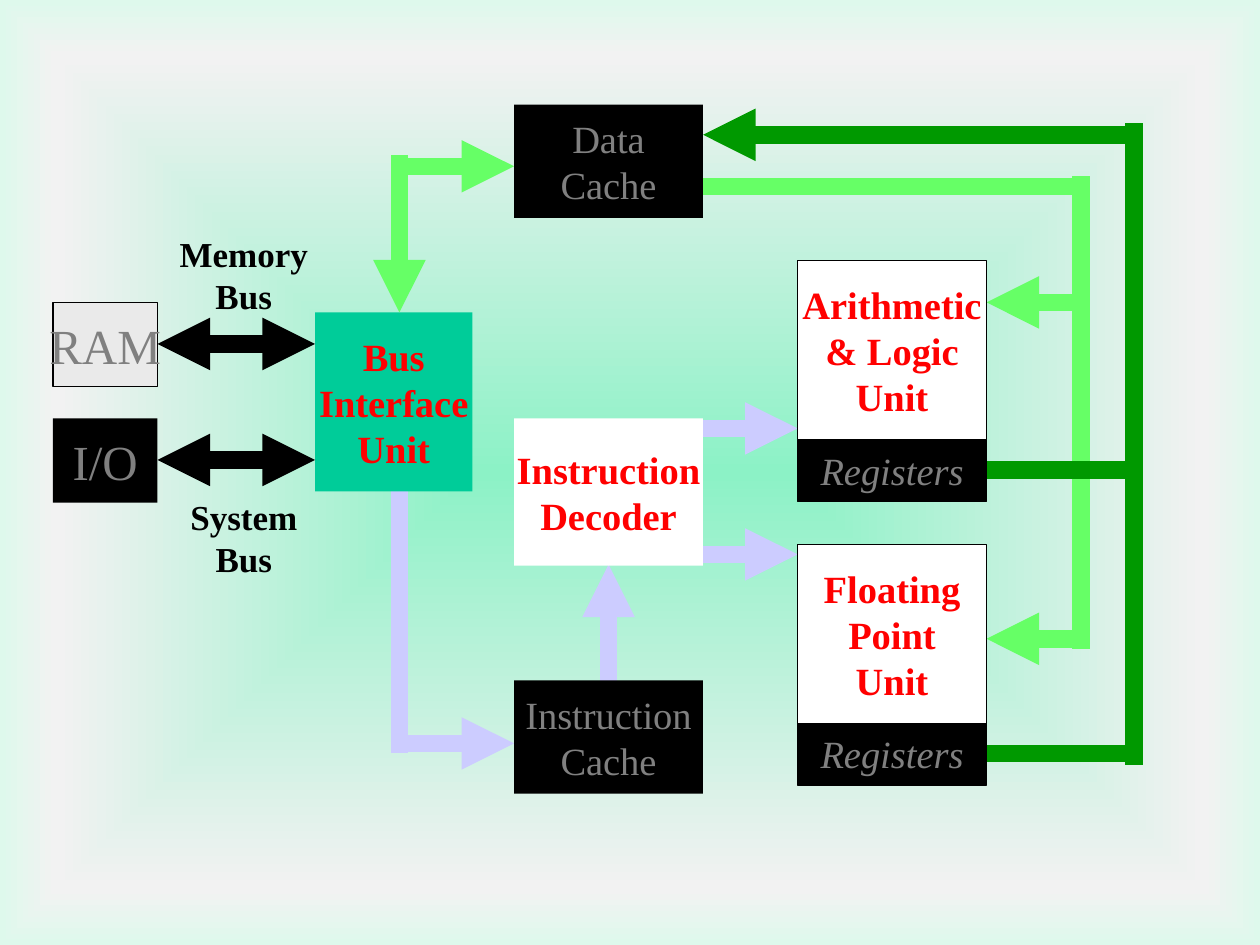
from pptx import Presentation
from pptx import util as u
from pptx.dml.color import RGBColor
from pptx.enum import shapes, text
from pptx.oxml import parse_xml
from pptx.oxml.ns import nsdecls, qn

COLORS = {
    "black": "000000", "white": "FFFFFF", "gray": "808080", "pale": "EAEAEA",
    "red": "FF0000", "teal": "00CC99", "lilac": "CCCCFF",
    "lime": "66FF66", "green": "009900",
}
BACKDROP = [(0, "8CF2C6"), (88, "F2F2F2"), (100, "DEF9EC")]
FONT = "Times New Roman"
CACHE = {"size": u.Pt(22)}
UNIT = {"size": u.Pt(22), "bold": True}
REGISTERS = {"size": u.Pt(22), "italic": True}
DEVICE = {"size": u.Pt(28)}
LABEL = {"size": u.Pt(20), "bold": True}


def rgb(name):
    return RGBColor.from_string(COLORS[name])


def set_background(s):
    stops = "".join(f'<a:gs pos="{pos * 1000}"><a:srgbClr val="{color}"/></a:gs>'
                    for pos, color in BACKDROP)
    s._element.cSld.insert(0, parse_xml(
        f'<p:bg {nsdecls("p", "a")}><p:bgPr><a:gradFill rotWithShape="0">'
        f'<a:gsLst>{stops}</a:gsLst><a:path path="shape">'
        '<a:fillToRect l="50000" t="50000" r="50000" b="50000"/></a:path>'
        '</a:gradFill><a:effectLst/></p:bgPr></p:bg>'))


def write(sp, lines, color, fmt):
    tf = sp.text_frame
    tf.word_wrap = False
    for i, line in enumerate(lines):
        p = tf.paragraphs[0] if i == 0 else tf.add_paragraph()
        p.alignment = text.PP_ALIGN.CENTER
        r = p.add_run()
        r.text = line
        r.font.name = FONT
        r.font.color.rgb = rgb(color)
        for key, value in fmt.items():
            setattr(r.font, key, value)


def block(s, x, y, w, h, lines, fill, color, fmt, outlined=False):
    sp = s.shapes.add_shape(shapes.MSO_SHAPE.RECTANGLE,
                            *map(u.Inches, (x, y, w, h)))
    sp.shadow.inherit = False
    sp.fill.solid()
    sp.fill.fore_color.rgb = rgb(fill)
    if outlined:
        sp.line.color.rgb = rgb("black")
        sp.line.width = u.Pt(0.75)
    else:
        sp.line.fill.background()
    sp.text_frame.vertical_anchor = text.MSO_ANCHOR.MIDDLE
    write(sp, lines, color, fmt)


def label(s, x, y, w, h, lines):
    sp = s.shapes.add_textbox(*map(u.Inches, (x, y, w, h)))
    write(sp, lines, "black", LABEL)
    sp.text_frame.auto_size = text.MSO_AUTO_SIZE.SHAPE_TO_FIT_TEXT


def bus(s, x1, y1, x2, y2, color, ends=()):
    """Thick line; ends names the arrowheads: head at start, tail at finish."""
    c = s.shapes.add_connector(shapes.MSO_CONNECTOR.STRAIGHT,
                               *map(u.Inches, (x1, y1, x2, y2)))
    c.line.color.rgb = rgb(color)
    c.line.width = u.Pt(10)
    ln = c.line._get_or_add_ln()
    for end in ends:
        ln.append(ln.makeelement(qn(f"a:{end}End"), {"type": "triangle"}))
    c._element.spPr.append(parse_xml(f'<a:effectLst {nsdecls("a")}/>'))


def instruction_path(s, x, y):
    """Bus interface unit, instruction cache and decoder."""
    mid = x + 0.67
    bus(s, mid, y + 1.42, mid, y + 3.5, "lilac")
    bus(s, mid, y + 3.42, x + 1.58, y + 3.42, "lilac", ["tail"])
    bus(s, x + 2.33, y + 2, x + 2.33, y + 3, "lilac", ["head"])
    for dy in (0.92, 1.92):
        bus(s, x + 3.08, y + dy, x + 3.83, y + dy, "lilac", ["tail"])
    block(s, x, y, 1.25, 1.42, ["Bus", "Interface", "Unit"], "teal", "red", UNIT)
    block(s, x + 1.58, y + 0.84, 1.5, 1.17, ["Instruction", "Decoder"],
          "white", "red", UNIT)
    block(s, x + 1.58, y + 2.92, 1.5, 0.9, ["Instruction", "Cache"],
          "black", "gray", CACHE)


def data_path(s, x, y):
    """Data cache with its links to the bus interface and both units."""
    left, right = x - 0.91, x + 4.5
    bus(s, left, y + 0.4, left, y + 1.65, "lime", ["tail"])
    bus(s, left, y + 0.49, x, y + 0.49, "lime", ["tail"])
    bus(s, right, y + 0.57, right, y + 4.32, "lime")
    bus(s, x + 1.5, y + 0.65, right, y + 0.65, "lime")
    for dy in (1.57, 4.24):
        bus(s, x + 3.75, y + dy, right, y + dy, "lime", ["head"])
    block(s, x, y, 1.5, 0.9, ["Data", "Cache"], "black", "gray", CACHE)


def write_back(s, x, y):
    """Results return from the registers to the data cache."""
    right = x + 3.42
    for dy in (2.66, 4.91):
        bus(s, right, y + dy, x + 2.25, y + dy, "green")
    bus(s, right, y - 0.09, right, y + 5, "green")
    bus(s, x, y, right, y, "green", ["head"])


def execution_unit(s, x, y, lines):
    block(s, x, y + 1.41, 1.5, 0.5, ["Registers"], "black", "gray",
          REGISTERS, outlined=True)
    block(s, x, y, 1.5, 1.42, lines, "white", "red", UNIT, outlined=True)


def devices(s, x, y):
    """RAM and I/O with their buses."""
    for dy, name, fill, color, outlined in (
            (0, "RAM", "pale", "gray", True),
            (0.92, "I/O", "black", "gray", False)):
        bus(s, x + 0.83, y + dy + 0.33, x + 2.08, y + dy + 0.33, "black",
            ["head", "tail"])
        block(s, x, y + dy, 0.83, 0.67, [name], fill, color, DEVICE, outlined)
    label(s, x + 0.88, y - 0.6, 1.27, 0.77, ["Memory", "Bus"])
    label(s, x + 0.92, y + 1.48, 1.19, 0.77, ["System", "Bus"])


def main():
    prs = Presentation()
    prs.slide_width, prs.slide_height = u.Inches(10), u.Inches(7.5)
    s = prs.slides.add_slide(prs.slide_layouts[6])
    set_background(s)
    instruction_path(s, 2.5, 2.48)
    data_path(s, 4.08, 0.83)
    write_back(s, 5.58, 1.07)
    execution_unit(s, 6.33, 2.07, ["Arithmetic", "& Logic", "Unit"])
    execution_unit(s, 6.33, 4.32, ["Floating", "Point", "Unit"])
    devices(s, 0.42, 2.4)
    prs.save("out.pptx")


if __name__ == "__main__":
    main()
